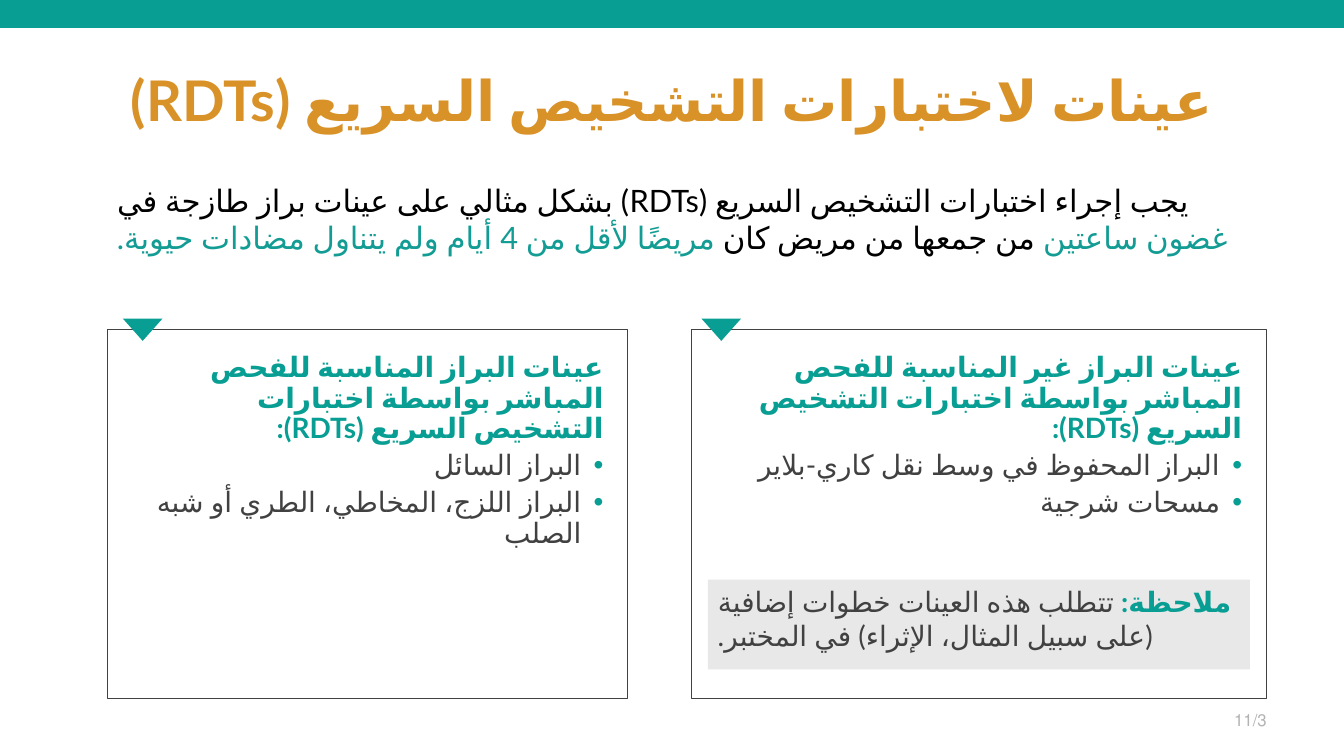
from dataclasses import dataclass

from lxml import etree
from pptx import Presentation
from pptx.dml.color import RGBColor
from pptx.enum.lang import MSO_LANGUAGE_ID
from pptx.enum.shapes import MSO_SHAPE
from pptx.enum.text import MSO_ANCHOR, PP_ALIGN
from pptx.oxml.ns import qn
from pptx.util import Pt

RECTANGLE, TRIANGLE = MSO_SHAPE.RECTANGLE, MSO_SHAPE.ISOSCELES_TRIANGLE
TOP, MIDDLE = MSO_ANCHOR.TOP, MSO_ANCHOR.MIDDLE
LEFT, CENTER, RIGHT = PP_ALIGN.LEFT, PP_ALIGN.CENTER, PP_ALIGN.RIGHT
ARABIC = MSO_LANGUAGE_ID.ARABIC


@dataclass(frozen=True)
class Theme:
    font: str = "Lato"
    teal: str = "099E93"
    accent: str = "129C94"
    gold: str = "D99228"
    black: str = "000000"
    ink: str = "414141"
    note: str = "E8E8E8"
    muted: str = "B3B3B3"
    title_size: int = 40
    intro_size: int = 22
    body_size: int = 20
    page_size: int = 12


THEME = Theme()
PANEL_TOP, PANEL_HEIGHT = 235.4, 263.5


def add_block(slide, kind, box, fill=None, line=None):
    block = slide.shapes.add_shape(kind, *map(Pt, box))
    block.shadow.inherit = False
    if fill:
        block.fill.solid()
        block.fill.fore_color.rgb = RGBColor.from_string(fill)
    else:
        block.fill.background()
    if line:
        block.line.color.rgb = RGBColor.from_string(line)
        block.line.width = Pt(0.75)
    else:
        block.line.fill.background()
    return block


def prepare_frame(holder, anchor=TOP, inset=None):
    frame = holder.text_frame
    frame.word_wrap = True
    frame.vertical_anchor = anchor
    if inset is not None:
        frame.margin_left = frame.margin_right = Pt(inset)
        frame.margin_top = frame.margin_bottom = Pt(inset)
    return frame


def add_text_area(slide, box, anchor=TOP):
    return prepare_frame(slide.shapes.add_textbox(*map(Pt, box)), anchor)


def add_bullet(properties):
    indent = Pt(15.8)
    properties.set("marL", str(indent))
    properties.set("indent", str(-indent))
    colour = etree.SubElement(properties, qn("a:buClr"))
    etree.SubElement(colour, qn("a:srgbClr"), val=THEME.teal)
    etree.SubElement(properties, qn("a:buFont"), typeface="Arial")
    etree.SubElement(properties, qn("a:buChar"), char="•")


def write(frame, *parts, size, align=LEFT, bold=False, spacing=None,
          before=0, bullet=False, arabic_font=True):
    paragraph = frame.paragraphs[0]
    if paragraph.runs:
        paragraph = frame.add_paragraph()
    paragraph.alignment = align
    paragraph.space_before = Pt(before)
    if spacing:
        paragraph.line_spacing = spacing
    properties = paragraph._p.get_or_add_pPr()
    properties.set("rtl", "1")
    if bullet:
        add_bullet(properties)
    for text, colour, *weight in parts:
        run = paragraph.add_run()
        run.text = text
        run.font.size = Pt(size)
        run.font.bold = weight[0] if weight else bold
        run.font.name = THEME.font
        run.font.language_id = ARABIC
        run.font.color.rgb = RGBColor.from_string(colour)
        if arabic_font:
            etree.SubElement(run._r.get_or_add_rPr(), qn("a:cs"), typeface=THEME.font)


def add_panel(slide, left, width, marker_left, heading, samples):
    panel = add_block(slide, RECTANGLE, (left, PANEL_TOP, width, PANEL_HEIGHT), line=THEME.ink)
    frame = prepare_frame(panel, inset=17.3)
    write(frame, (heading, THEME.teal), size=THEME.body_size, align=RIGHT,
          bold=True, spacing=0.9, before=10)
    for sample in samples:
        write(frame, (sample, THEME.ink), size=THEME.body_size, align=RIGHT,
              spacing=0.9, before=5, bullet=True)
    marker = add_block(slide, TRIANGLE, (marker_left, 227.5, 28.4, 16), fill=THEME.teal)
    marker.rotation = 180


def main():
    deck = Presentation()
    deck.slide_width, deck.slide_height = Pt(960), Pt(540)
    slide = deck.slides.add_slide(deck.slide_layouts[6])

    add_block(slide, RECTANGLE, (-6, -6.5, 972, 26.5), fill=THEME.teal)
    title = add_text_area(slide, (66, 21.6, 828, 104.4), MIDDLE)
    write(title, ("عينات لاختبارات التشخيص السريع (RDTs)", THEME.gold),
          size=THEME.title_size, align=CENTER, bold=True, spacing=0.9)

    intro = add_text_area(slide, (76.5, 126, 828, 60.5))
    write(intro,
          ("يجب إجراء اختبارات التشخيص السريع (RDTs) بشكل مثالي على عينات براز طازجة في ", THEME.black),
          ("غضون ساعتين", THEME.accent),
          (" من جمعها من مريض كان ", THEME.black),
          ("مريضًا لأقل من 4 أيام ولم يتناول مضادات حيوية.", THEME.accent),
          size=THEME.intro_size)

    add_panel(slide, 76.9, 371.5, 87.7,
              "عينات البراز المناسبة للفحص المباشر بواسطة اختبارات التشخيص السريع (RDTs):",
              ["البراز السائل", "البراز اللزج، المخاطي، الطري أو شبه الصلب"])
    add_panel(slide, 493.8, 410.7, 501,
              "عينات البراز غير المناسبة للفحص المباشر بواسطة اختبارات التشخيص السريع (RDTs):",
              ["البراز المحفوظ في وسط نقل كاري-بلاير", "مسحات شرجية"])

    note = prepare_frame(add_block(slide, RECTANGLE, (505.6, 414, 387.3, 64.1), fill=THEME.note))
    write(note, ("ملاحظة: ", THEME.teal, True),
          ("تتطلب هذه العينات خطوات إضافية (على سبيل المثال، الإثراء) في المختبر.", THEME.ink),
          size=THEME.body_size)

    page = add_text_area(slide, (696, 500.4, 216, 28.8), MIDDLE)
    write(page, ("11/3", THEME.muted), size=THEME.page_size, align=RIGHT,
          spacing=0.9, arabic_font=False)

    deck.save("out.pptx")


if __name__ == "__main__":
    main()
